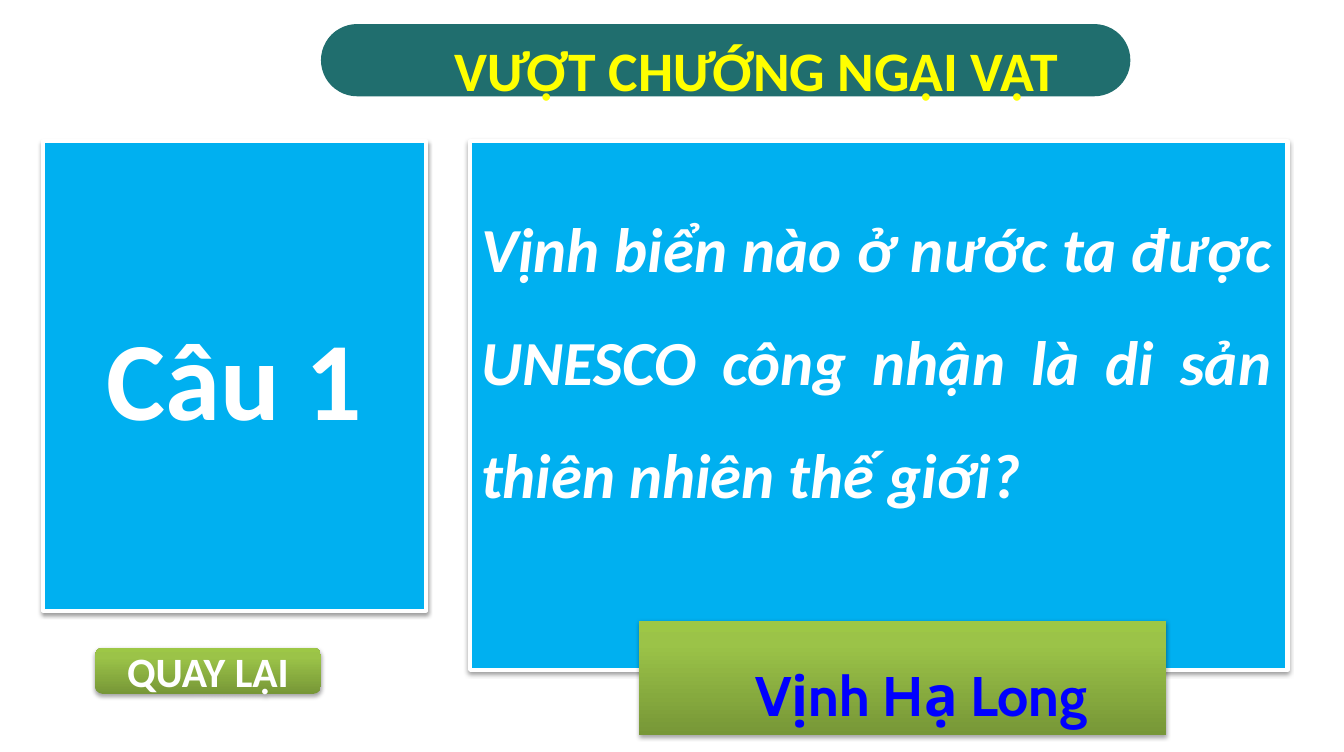
from copy import deepcopy
from dataclasses import dataclass
from typing import Optional

from lxml import etree
from pptx import Presentation
from pptx.dml.color import RGBColor
from pptx.enum.shapes import MSO_SHAPE
from pptx.enum.text import MSO_ANCHOR, MSO_AUTO_SIZE, PP_ALIGN
from pptx.oxml.ns import qn
from pptx.util import Cm, Pt

RECTANGLE = MSO_SHAPE.RECTANGLE
ROUNDED = MSO_SHAPE.ROUNDED_RECTANGLE
TOP, MIDDLE = MSO_ANCHOR.TOP, MSO_ANCHOR.MIDDLE
CENTER, JUSTIFY = PP_ALIGN.CENTER, PP_ALIGN.JUSTIFY
GROW, FIXED = MSO_AUTO_SIZE.SHAPE_TO_FIT_TEXT, MSO_AUTO_SIZE.NONE

WHITE = RGBColor(0xFF, 0xFF, 0xFF)
SKY = RGBColor(0x00, 0xB0, 0xF0)
TEAL = RGBColor(0x20, 0x6E, 0x6E)
YELLOW = RGBColor(0xFF, 0xFF, 0x00)
BLUE = RGBColor(0x00, 0x00, 0xFF)
GREEN_STOPS = (
    (0.0, RGBColor(0x77, 0x97, 0x37)),
    (0.8, RGBColor(0x9B, 0xC3, 0x48)),
    (1.0, RGBColor(0x9D, 0xC7, 0x46)),
)


@dataclass(frozen=True)
class Shadow:
    opacity: int
    blur: float
    distance: float


@dataclass(frozen=True)
class Label:
    text: str
    size: int
    color: RGBColor = WHITE
    font: str = "Calibri"
    italic: bool = False
    align: PP_ALIGN = CENTER
    anchor: MSO_ANCHOR = TOP
    auto_size: MSO_AUTO_SIZE = GROW
    spacing: float = 1.5
    indent: float = 0
    inset: tuple[float, float] = (0.33, 0.18)


@dataclass(frozen=True)
class Block:
    box: tuple[float, float, float, float]
    preset: Optional[MSO_SHAPE] = None
    fill: Optional[RGBColor] = None
    outlined: bool = False
    shadow: Optional[Shadow] = None
    radius: Optional[float] = None
    label: Optional[Label] = None


BUTTON_SHADOW = Shadow(35, 3.1, 1.8)
CARD_SHADOW = Shadow(38, 3.1, 1.6)
TEXT_BOX_INSET = (0.25, 0.13)

BLOCKS = (
    Block((2.41, 16.41, 5.72, 1.17), ROUNDED, shadow=BUTTON_SHADOW,
          label=Label("QUAY LẠI", 30, anchor=MIDDLE, auto_size=FIXED, spacing=1.0)),
    Block((1.09, 3.58, 9.7, 11.89), RECTANGLE, SKY, True, CARD_SHADOW,
          label=Label("Câu 1", 80, anchor=MIDDLE, auto_size=FIXED, spacing=1.0)),
    Block((11.91, 3.58, 20.7, 13.39), RECTANGLE, SKY, True, CARD_SHADOW),
    Block((16.18, 15.72, 13.36, 2.9), RECTANGLE, shadow=BUTTON_SHADOW,
          label=Label("Vịnh Hạ Long", 40, BLUE, "Cabin", indent=0.96)),
    Block((8.13, 0.61, 20.5, 1.83), ROUNDED, TEAL, radius=0.5),
    Block((8.56, -0.08, 19.48, 2.82),
          label=Label("VƯỢT CHƯỚNG NGẠI VẬT", 40, YELLOW, indent=1.7,
                      inset=TEXT_BOX_INSET)),
    Block((11.94, 4.24, 20.52, 8.61),
          label=Label("Vịnh biển nào ở nước ta được UNESCO công nhận "
                      "là di sản thiên nhiên thế giới?", 45, italic=True,
                      align=JUSTIFY, inset=TEXT_BOX_INSET)),
)


def apply(target: object, formats: dict[str, object]) -> None:
    for name, value in formats.items():
        setattr(target, name, value)


def fill_green(shape) -> None:
    shape.fill.gradient()
    shape.fill.gradient_angle = 90
    stop_list = shape._element.spPr.find(".//" + qn("a:gsLst"))
    stop_list.append(deepcopy(stop_list[-1]))
    for stop, (position, color) in zip(shape.fill.gradient_stops, GREEN_STOPS):
        stop.position = position
        stop.color.rgb = color


def add_shadow(shape, shadow: Shadow) -> None:
    effects = shape._element.spPr.find(qn("a:effectLst"))
    outer = etree.SubElement(effects, qn("a:outerShdw"), {
        "blurRad": str(Pt(shadow.blur)),
        "dist": str(Pt(shadow.distance)),
        "dir": "5400000",
        "rotWithShape": "0",
    })
    color = etree.SubElement(outer, qn("a:srgbClr"), {"val": "000000"})
    etree.SubElement(color, qn("a:alpha"), {"val": str(shadow.opacity * 1000)})


def write_label(shape, label: Label) -> None:
    horizontal, vertical = (Cm(value) for value in label.inset)
    frame = shape.text_frame
    apply(frame, {
        "word_wrap": True,
        "auto_size": label.auto_size,
        "vertical_anchor": label.anchor,
        "margin_left": horizontal,
        "margin_right": horizontal,
        "margin_top": vertical,
        "margin_bottom": vertical,
    })
    paragraph = frame.paragraphs[0]
    apply(paragraph, {"alignment": label.align, "line_spacing": label.spacing})
    if label.indent:
        properties = paragraph._p.get_or_add_pPr()
        properties.set("marL", str(Cm(label.indent)))
        properties.set("indent", "0")
    run = paragraph.add_run()
    run.text = label.text
    apply(run.font, {
        "name": label.font,
        "size": Pt(label.size),
        "bold": True,
        "italic": label.italic,
    })
    run.font.color.rgb = label.color


def style_shape(shape, block: Block) -> None:
    shape.shadow.inherit = False
    if block.radius is not None:
        shape.adjustments[0] = block.radius
    if block.fill is None:
        fill_green(shape)
    else:
        shape.fill.solid()
        shape.fill.fore_color.rgb = block.fill
    if block.outlined:
        shape.line.color.rgb = WHITE
        shape.line.width = Pt(3)
    else:
        shape.line.fill.background()
    if block.shadow:
        add_shadow(shape, block.shadow)


def draw_block(slide, block: Block) -> None:
    box = [Cm(value) for value in block.box]
    if block.preset is None:
        shape = slide.shapes.add_textbox(*box)
    else:
        shape = slide.shapes.add_shape(block.preset, *box)
        style_shape(shape, block)
    if block.label:
        write_label(shape, block.label)


def main() -> None:
    presentation = Presentation()
    apply(presentation, {"slide_width": Cm(34.04), "slide_height": Cm(19.05)})
    slide = presentation.slides.add_slide(presentation.slide_layouts[6])
    for block in BLOCKS:
        draw_block(slide, block)
    presentation.save("out.pptx")


if __name__ == "__main__":
    main()
